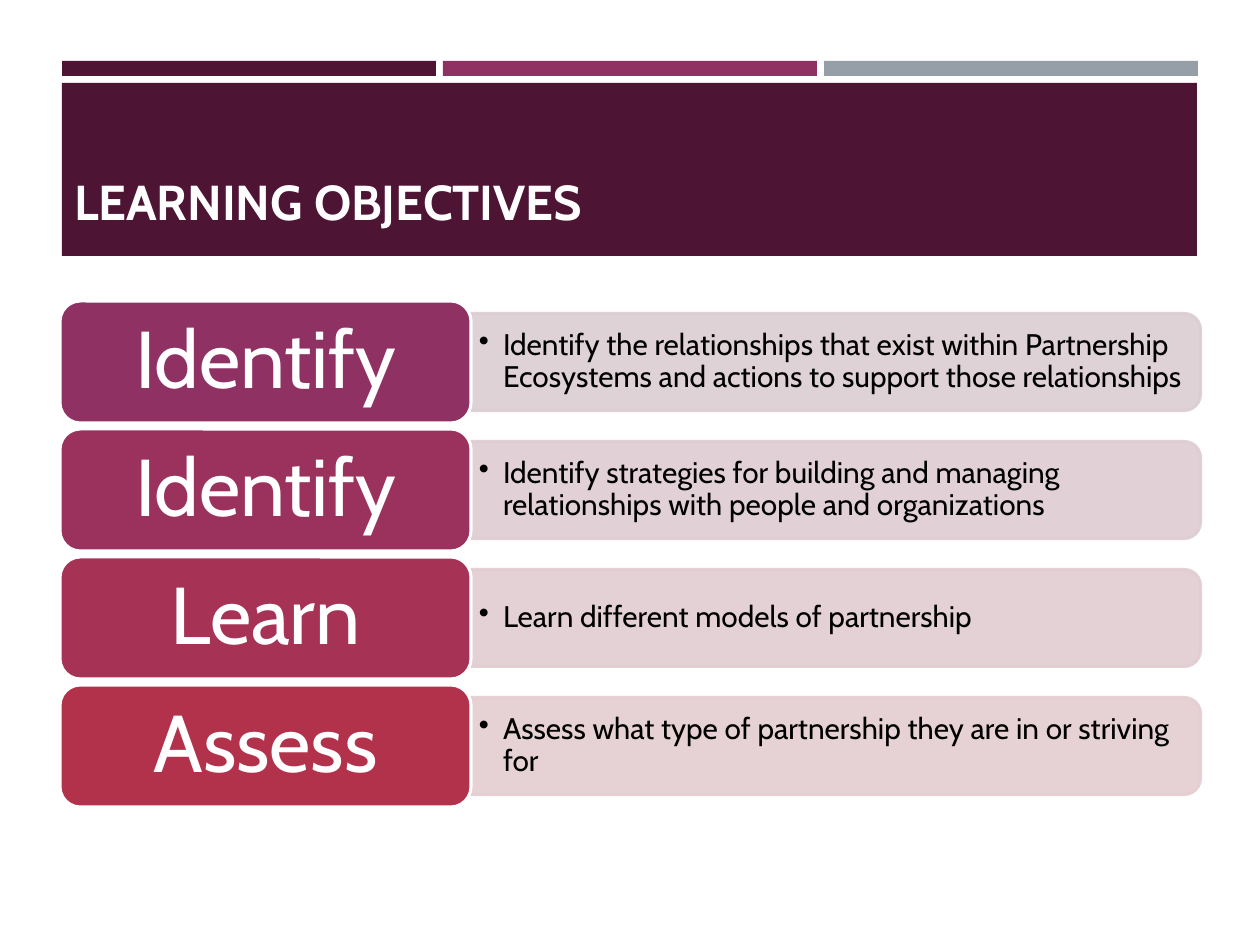
import pptx
import pptx.util
import pptx.dml.color
import pptx.enum.shapes
import pptx.enum.text
import pptx.oxml
import pptx.oxml.ns
from lxml import etree

SCALE = 914400 / 126  # EMU in one px
FONT = "Cabin"
DARK, WHITE, BLACK = "4D1434", "FFFFFF", "000000"
KIND = pptx.enum.shapes.MSO_SHAPE
ALIGN = pptx.enum.text.PP_ALIGN
ANCHOR = pptx.enum.text.MSO_ANCHOR

# Label, label colour, panel colour, text
ROWS = [
    ("Identify", "903163", "DBCED3",
     "Identify the relationships that exist within Partnership "
     "Ecosystems and actions to support those relationships"),
    ("Identify", "9B325D", "DECDD2",
     "Identify strategies for building and managing "
     "relationships with people and organizations"),
    ("Learn", "A63256", "E1CDD1",
     "Learn different models of partnership"),
    ("Assess", "B2324B", "E4CED0",
     "Assess what type of partnership they are in or striving for"),
]
STEP = 128


def px(n):
    return pptx.util.Emu(round(n * SCALE))


def paint(color, hue):
    color.rgb = pptx.dml.color.RGBColor.from_string(hue)


def fade(fill, share):
    """Set the opacity of a solid fill, in percent."""
    for tone in fill.iter(pptx.oxml.ns.qn("a:srgbClr")):
        alpha = etree.SubElement(tone, pptx.oxml.ns.qn("a:alpha"))
        alpha.set("val", str(share * 1000))


def add_box(slide, kind, box, fill, line=None):
    shape = slide.shapes.add_shape(kind, *map(px, box))
    shape.shadow.inherit = False
    shape.fill.solid()
    paint(shape.fill.fore_color, fill)
    if line:
        paint(shape.line.color, line)
        shape.line.width = pptx.util.Pt(1.75)
    else:
        shape.line.fill.background()
    return shape


def write(shape, text, size, hue, inset, anchor=ANCHOR.MIDDLE,
          align=ALIGN.LEFT, bold=False, space=0.9):
    frame = shape.text_frame
    frame.word_wrap = True
    frame.vertical_anchor = anchor
    frame.margin_left = frame.margin_right = px(inset[0])
    frame.margin_top = frame.margin_bottom = px(inset[1])
    para = frame.paragraphs[0]
    para.alignment = align
    para.line_spacing = space
    run = para.add_run()
    run.text = text
    run.font.name = FONT
    run.font.size = pptx.util.Pt(size)
    run.font.bold = bold
    paint(run.font.color, hue)
    return para


def add_mark(para, indent):
    """Give a paragraph a hanging bullet."""
    props = para._p.get_or_add_pPr()
    props.set("marL", str(px(indent)))
    props.set("indent", str(-px(indent)))
    mark = etree.SubElement(props, pptx.oxml.ns.qn("a:buChar"))
    mark.set("char", "•")


def add_head(slide):
    # Three colour strips above the title band
    for i, hue in enumerate((DARK, "903163", "969FA7")):
        add_box(slide, KIND.RECTANGLE, (62 + 381 * i, 61, 374, 15), hue)
    add_box(slide, KIND.RECTANGLE, (62, 83, 1135, 173), DARK)
    title = slide.shapes.add_textbox(*map(px, (61, 97, 1140, 140)))
    write(title, "LEARNING OBJECTIVES", 28, "FFFEFF", (13, 6),
          ANCHOR.BOTTOM, bold=True)


def add_row(slide, top, label, hue, tint, text):
    # Panel: a tall shape with a round top, turned to the right
    panel = add_box(slide, KIND.ROUND_2_SAME_RECTANGLE,
                    (787, top - 304, 97, 730), tint, tint)
    panel.rotation = 90
    fade(panel._element.spPr, 90)
    note = slide.shapes.add_textbox(*map(px, (470, top + 17, 725, 88)))
    add_mark(write(note, text, 17, BLACK, (9, 5)), 24)
    # Label
    pill = add_box(slide, KIND.ROUNDED_RECTANGLE,
                   (60, top, 411, 122), hue, WHITE)
    write(pill, label, 46, WHITE, (24, 12), align=ALIGN.CENTER)


def main():
    deck = pptx.Presentation()
    deck.slide_width, deck.slide_height = px(1260), px(945)
    slide = deck.slides.add_slide(deck.slide_layouts[6])
    add_head(slide)
    for i, row in enumerate(ROWS):
        add_row(slide, 301 + STEP * i, *row)
    deck.save("out.pptx")


if __name__ == "__main__":
    main()
